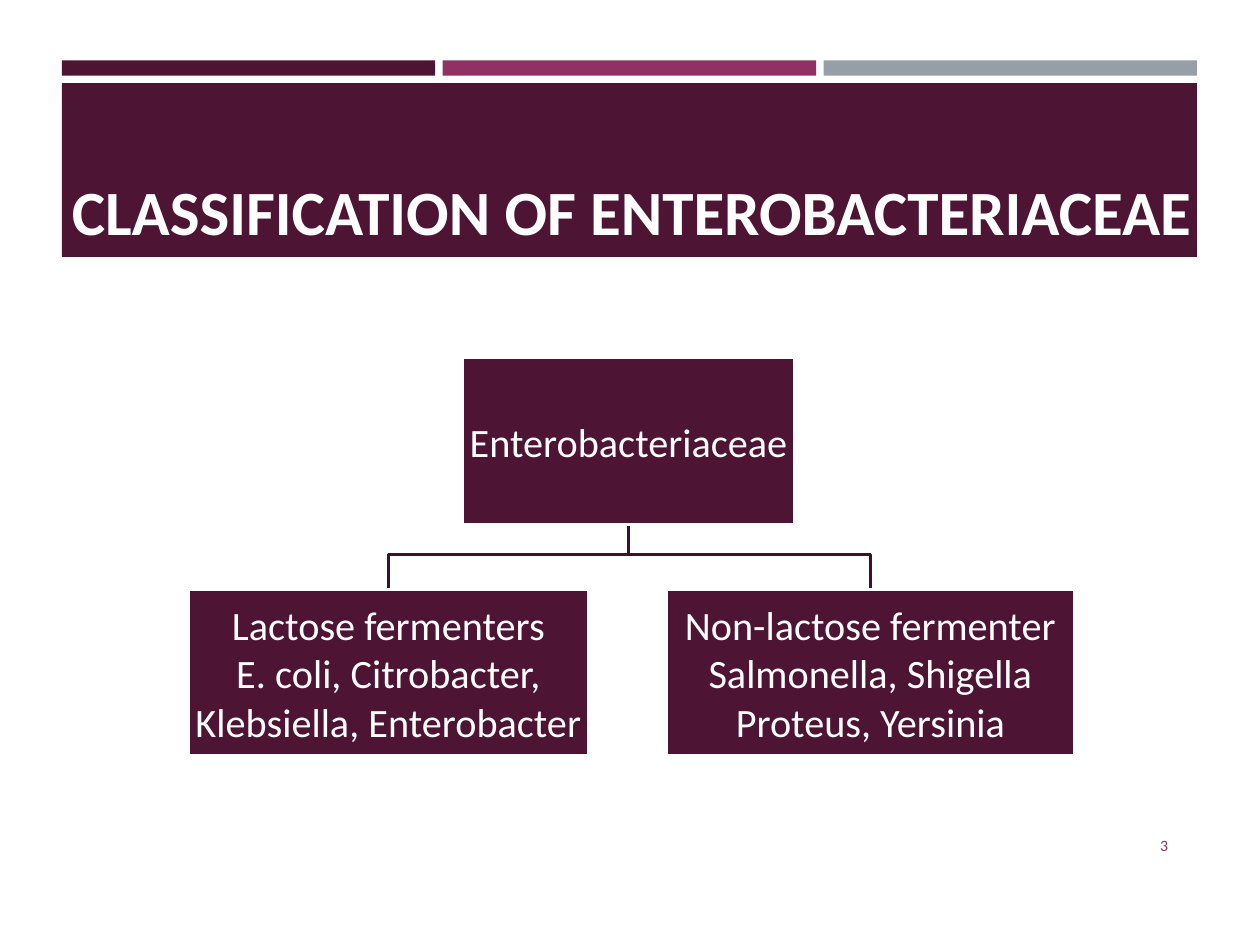
"""Build a slide that classifies Enterobacteriaceae in a two-branch tree."""
from dataclasses import dataclass

from pptx import Presentation
from pptx.dml.color import RGBColor as RGB
from pptx.enum.shapes import MSO_SHAPE as SHAPE
from pptx.enum.text import MSO_ANCHOR as ANCHOR, MSO_AUTO_SIZE as AUTO, PP_ALIGN as ALIGN
from pptx.util import Inches, Pt

PLUM = RGB(0x4D, 0x14, 0x34)
BERRY = RGB(0x90, 0x31, 0x63)
GREY = RGB(0x96, 0x9F, 0xA7)
DARK = RGB(0x3E, 0x10, 0x2A)
WHITE = RGB(0xFF, 0xFF, 0xFF)

FONT = "Calibri"
LEFT, CONTENT_W, GAP = 0.49, 9.01, 0.06
BARS = (PLUM, BERRY, GREY)
BAR_W = (CONTENT_W - GAP * (len(BARS) - 1)) / len(BARS)
BOX_H, ROOT_TOP, LEVEL = 1.32, 2.84, 1.84
LINE_W = Pt(1.75)


@dataclass
class Node:
    """A tree box: left edge, width, level and lines of text."""
    left: float
    width: float
    level: int
    lines: tuple[str, ...]

    @property
    def top(self) -> float:
        return ROOT_TOP + self.level * LEVEL

    @property
    def middle(self) -> float:
        return self.left + self.width / 2


ROOT = Node(3.67, 2.64, 0, ("Enterobacteriaceae",))
BRANCHES = (
    Node(1.5, 3.17, 1, ("Lactose fermenters", "E. coli, Citrobacter,", "Klebsiella, Enterobacter")),
    Node(5.29, 3.24, 1, ("Non-lactose fermenter", "Salmonella, Shigella", "Proteus, Yersinia")),
)


def write(sp, lines: tuple[str, ...], align, color: RGB, size: float,
          bold: bool = False, **frame) -> None:
    """Fill a shape's text frame with one paragraph per line."""
    tf = sp.text_frame
    for name, value in {"word_wrap": True, "auto_size": AUTO.NONE, **frame}.items():
        setattr(tf, name, value)
    for i, line in enumerate(lines):
        p = tf.paragraphs[0] if i == 0 else tf.add_paragraph()
        p.alignment = align
        r = p.add_run()
        r.text = line
        for name, value in {"name": FONT, "size": Pt(size), "bold": bold}.items():
            setattr(r.font, name, value)
        r.font.color.rgb = color


def add_rect(s, left: float, top: float, width: float, height: float, fill: RGB):
    """Add a flat rectangle without outline."""
    sp = s.shapes.add_shape(SHAPE.RECTANGLE, *map(Inches, (left, top, width, height)))
    sp.shadow.inherit = False
    sp.fill.solid()
    sp.fill.fore_color.rgb = fill
    sp.line.fill.background()
    return sp


def add_link(s, parent: Node, child: Node) -> None:
    """Draw the elbow line from a parent box down to a child box."""
    start, end = parent.top + BOX_H, child.top
    bend = start + 0.24
    builder = s.shapes.build_freeform(Inches(parent.middle), Inches(start), scale=1.0)
    corners = ((parent.middle, bend), (child.middle, bend), (child.middle, end))
    builder.add_line_segments([(Inches(x), Inches(y)) for x, y in corners], close=False)
    sp = builder.convert_to_shape()
    sp.shadow.inherit = False
    sp.fill.background()
    sp.line.color.rgb = DARK
    sp.line.width = LINE_W


def add_node(s, node: Node) -> None:
    """Draw a tree box with its centred text."""
    sp = add_rect(s, node.left, node.top, node.width, BOX_H, PLUM)
    sp.line.color.rgb = WHITE
    sp.line.width = LINE_W
    margins = {f"margin_{side}": Inches(0.02) for side in ("left", "top", "right", "bottom")}
    write(sp, node.lines, ALIGN.CENTER, WHITE, 23, vertical_anchor=ANCHOR.MIDDLE, **margins)


def add_header(s, text: str) -> None:
    """Draw the colour bars and the banner, with the title on top."""
    for i, color in enumerate(BARS):
        add_rect(s, LEFT + i * (BAR_W + GAP), 0.48, BAR_W, 0.12, color)
    add_rect(s, LEFT, 0.66, CONTENT_W, 1.38, PLUM)
    title = s.shapes.title
    box = {"left": 0.47, "top": 0.67, "width": 9.3, "height": 1.35}
    for name, value in box.items():
        setattr(title, name, Inches(value))
    write(title, (text,), ALIGN.LEFT, WHITE, 36, bold=True, vertical_anchor=ANCHOR.BOTTOM)
    s.shapes._spTree.append(title._element)


def main() -> None:
    """Build and save the slide."""
    prs = Presentation()
    prs.slide_width, prs.slide_height = Inches(10), Inches(7.5)
    s = prs.slides.add_slide(prs.slide_layouts[5])
    add_header(s, "CLASSIFICATION OF ENTEROBACTERIACEAE")
    number = s.shapes.add_textbox(*map(Inches, (8.53, 6.51, 0.84, 0.4)))
    write(number, ("3",), ALIGN.RIGHT, BERRY, 9, vertical_anchor=ANCHOR.MIDDLE)
    for branch in BRANCHES:
        add_link(s, ROOT, branch)
    for node in (ROOT, *BRANCHES):
        add_node(s, node)
    prs.save("out.pptx")


if __name__ == "__main__":
    main()
